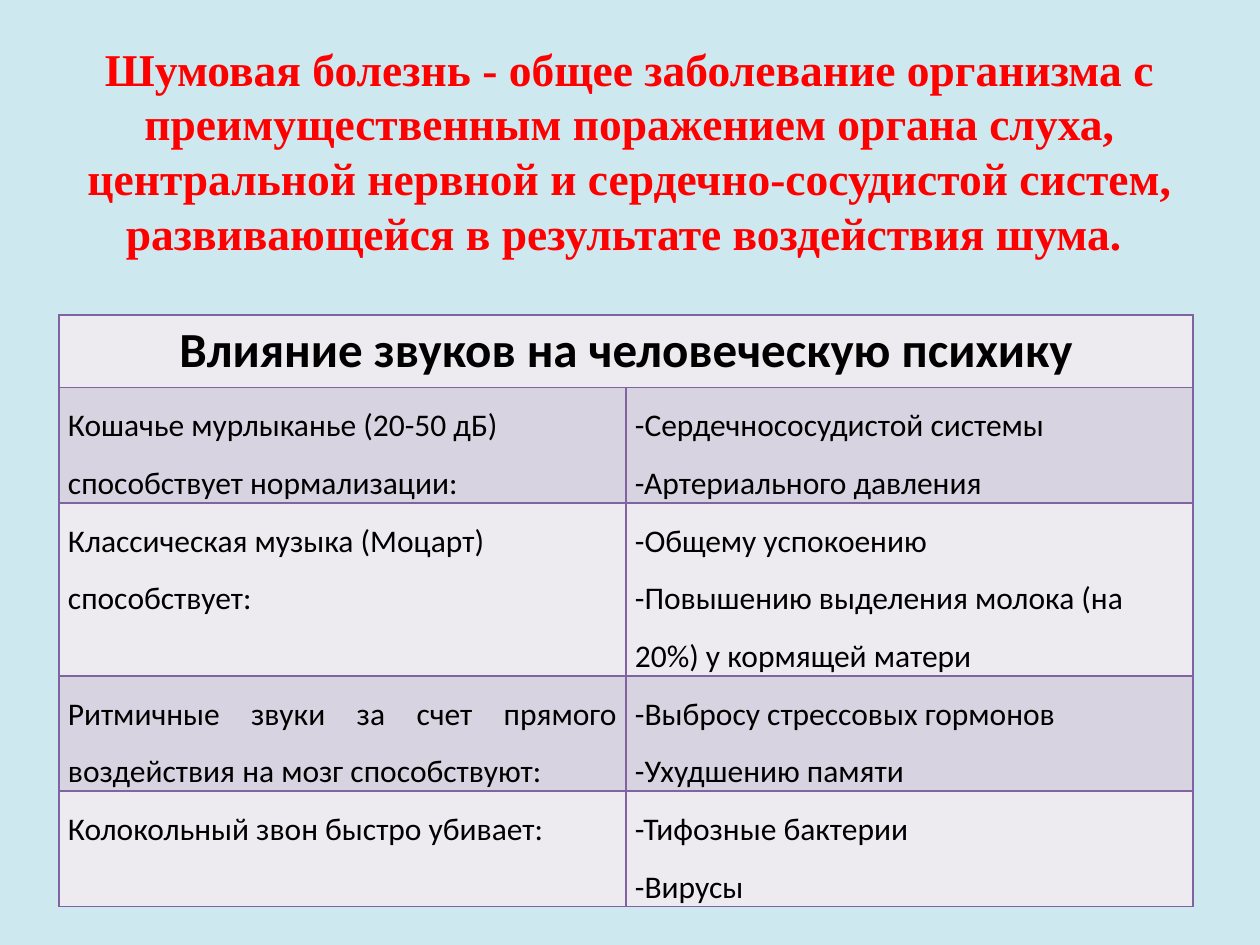
from lxml import etree
from pptx import Presentation
from pptx.dml.color import RGBColor
from pptx.enum.text import MSO_ANCHOR, MSO_AUTO_SIZE, PP_ALIGN
from pptx.oxml.ns import qn
from pptx.util import Emu, Pt

PX = 914400 // 126
LEFT, CENTER, JUSTIFY = PP_ALIGN.LEFT, PP_ALIGN.CENTER, PP_ALIGN.JUSTIFY
COLORS = {
    "background": "CEE8EF",
    "title": "FF0000",
    "text": "000000",
    "border": "8064A2",
    "light": "EDEAF0",
    "dark": "D8D3E0",
}
TITLE = (
    "Шумовая болезнь - общее заболевание организма с преимущественным "
    "поражением органа слуха, центральной нервной и сердечно-сосудистой "
    "систем, развивающейся в результате воздействия шума. "
)
HEADING = "Влияние звуков на человеческую психику"
ROWS = [
    (115, LEFT, "Кошачье мурлыканье (20-50 дБ) способствует нормализации:",
     ["-Сердечнососудистой системы", "-Артериального давления"]),
    (173, LEFT, "Классическая музыка (Моцарт) способствует:",
     ["-Общему успокоению",
      "-Повышению выделения молока (на 20%) у кормящей матери"]),
    (115, JUSTIFY, "Ритмичные звуки за счет прямого воздействия на мозг способствуют:",
     ["-Выбросу стрессовых гормонов", "-Ухудшению памяти"]),
    (115, LEFT, "Колокольный звон быстро убивает:",
     ["-Тифозные бактерии", "-Вирусы"]),
]


def write_text(frame, lines, size, font="Calibri", color="text", bold=False,
               align=LEFT, spacing=1.0):
    for index, line in enumerate(lines):
        paragraph = frame.paragraphs[0] if index == 0 else frame.add_paragraph()
        paragraph.alignment = align
        paragraph.line_spacing = spacing
        run = paragraph.add_run()
        run.text = line
        run.font.size = Pt(size)
        run.font.name = font
        run.font.bold = bold
        run.font.color.rgb = RGBColor.from_string(COLORS[color])


def style_cell(cell, fill):
    properties = cell._tc.get_or_add_tcPr()
    for side in ("a:lnL", "a:lnR", "a:lnT", "a:lnB"):
        line = etree.SubElement(properties, qn(side), w=str(Pt(1)))
        solid = etree.SubElement(line, qn("a:solidFill"))
        etree.SubElement(solid, qn("a:srgbClr"), val=COLORS["border"])
    cell.fill.solid()
    cell.fill.fore_color.rgb = RGBColor.from_string(COLORS[fill])


presentation = Presentation()
presentation.slide_width = Emu(1260 * PX)
presentation.slide_height = Emu(945 * PX)
slide = presentation.slides.add_slide(presentation.slide_layouts[5])
slide.background.fill.solid()
slide.background.fill.fore_color.rgb = RGBColor.from_string(COLORS["background"])

title = slide.shapes.title
title.left, title.top = Emu(63 * PX), Emu(41 * PX)
title.width, title.height = Emu(1134 * PX), Emu(218 * PX)
title.text_frame.word_wrap = True
title.text_frame.auto_size = MSO_AUTO_SIZE.NONE
title.text_frame.vertical_anchor = MSO_ANCHOR.MIDDLE
write_text(title.text_frame, [TITLE], 26, font="Times New Roman",
           color="title", bold=True, align=CENTER)

heights = [72] + [row[0] for row in ROWS]
table = slide.shapes.add_table(
    len(heights), 2, Emu(59 * PX), Emu(315 * PX),
    Emu(1134 * PX), Emu(sum(heights) * PX)).table
for row_index, height in enumerate(heights):
    table.rows[row_index].height = Emu(height * PX)
    for cell in table.rows[row_index].cells:
        style_cell(cell, "dark" if row_index % 2 else "light")

table.cell(0, 0).merge(table.cell(0, 1))
write_text(table.cell(0, 0).text_frame, [HEADING], 28, bold=True, align=CENTER)

for row_index, (height, align, sound, effects) in enumerate(ROWS, start=1):
    for column, lines in enumerate([[sound], effects]):
        cell = table.cell(row_index, column)
        cell.margin_left = cell.margin_right = Emu(9 * PX)
        cell.margin_top = cell.margin_bottom = 0
        write_text(cell.text_frame, lines, 18, spacing=1.5,
                   align=LEFT if column else align)

presentation.save("out.pptx")
